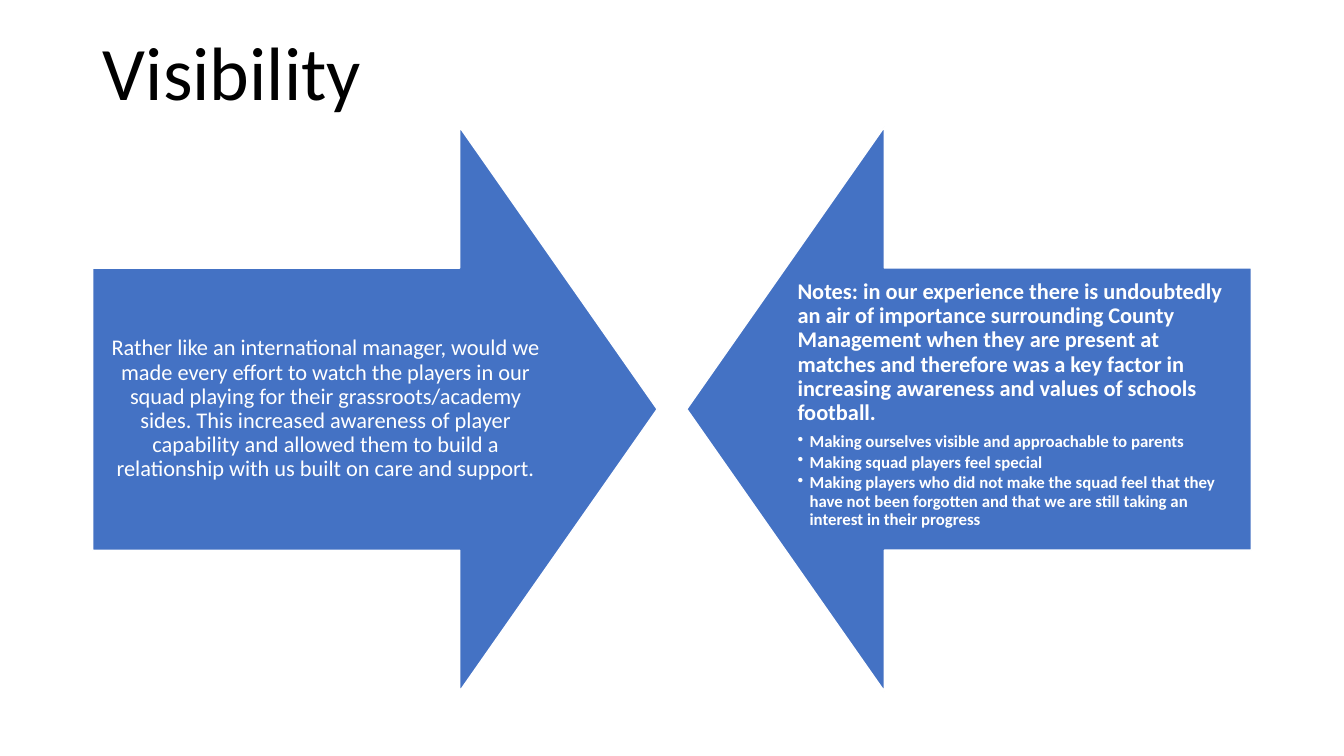
import dataclasses
import typing

import pptx
import pptx.dml.color
import pptx.enum.shapes
import pptx.enum.text
import pptx.oxml
import pptx.oxml.ns
import pptx.util

ALIGN = pptx.enum.text.PP_ALIGN
ANCHOR = pptx.enum.text.MSO_ANCHOR
WIDE, HIGH = 13.33, 7.5
EDGE, TOP = 6.9, 16.8
SPAN = 42.0
TALL = SPAN * WIDE / HIGH
BODY = 34.66
BLUE, WHITE, BLACK = "4472C4", "FFFFFF", "000000"


@dataclasses.dataclass(frozen=True)
class Line:
    text: str
    size: float = 16
    bold: bool = False
    align: typing.Any = ALIGN.LEFT
    after: float = 5.6
    dot: bool = False
    color: str = WHITE


@dataclasses.dataclass(frozen=True)
class Side:
    left: float
    start: float
    turn: float
    anchor: typing.Any
    lines: tuple[Line, ...]


POINTS = (
    "Making ourselves visible and approachable to parents",
    "Making squad players feel special",
    "Making players who did not make the squad feel that they have not been "
    "forgotten and that we are still taking an interest in their progress",
)
SIDES = (
    Side(EDGE, EDGE, 270, ANCHOR.MIDDLE, (
        Line("Rather like an international manager, would we made every effort "
             "to watch the players in our squad playing for their "
             "grassroots/academy sides. This increased awareness of player "
             "capability and allowed them to build a relationship with us "
             "built on care and support.", align=ALIGN.CENTER),
    )),
    Side(100 - EDGE - SPAN, 100 - EDGE - BODY, 90, ANCHOR.TOP, (
        Line("Notes: in our experience there is undoubtedly an air of "
             "importance surrounding County Management when they are present "
             "at matches and therefore was a key factor in increasing "
             "awareness and values of schools football.", bold=True),
        *(Line(point, 12, True, after=1.8, dot=True) for point in POINTS),
    )),
)


def tint(code: str) -> pptx.dml.color.RGBColor:
    return pptx.dml.color.RGBColor.from_string(code)


def place(left: float, top: float, width: float, height: float) -> list[int]:
    shares = ((left, WIDE), (top, HIGH), (width, WIDE), (height, HIGH))
    return [pptx.util.Inches(part * full / 100) for part, full in shares]


def apply(thing: typing.Any, form: dict[str, typing.Any]) -> None:
    for name, value in form.items():
        setattr(thing, name, value)


def mark(para: typing.Any) -> None:
    props = para._p.get_or_add_pPr()
    dent = pptx.util.Inches(0.12)
    for name, value in {"marL": dent, "indent": -dent, "lvl": 1}.items():
        props.set(name, str(value))
    dot = pptx.oxml.parse_xml(
        f'<a:buChar {pptx.oxml.ns.nsdecls("a")} char="•"/>')
    props.append(dot)


def write(frame: typing.Any, lines: tuple[Line, ...]) -> None:
    for index, line in enumerate(lines):
        para = frame.add_paragraph() if index else frame.paragraphs[0]
        apply(para, {"alignment": line.align, "line_spacing": 0.9,
                     "space_before": pptx.util.Pt(0),
                     "space_after": pptx.util.Pt(line.after)})
        if line.dot:
            mark(para)
        run = para.add_run()
        run.text = line.text
        apply(run.font, {"name": "Calibri", "size": pptx.util.Pt(line.size),
                         "bold": line.bold})
        run.font.color.rgb = tint(line.color)


def draw(shapes: typing.Any, side: Side) -> None:
    arrow = shapes.add_shape(pptx.enum.shapes.MSO_SHAPE.DOWN_ARROW,
                             *place(side.left, TOP, SPAN, TALL))
    arrow.rotation = side.turn
    arrow.adjustments[0] = 0.5
    arrow.adjustments[1] = 0.35
    arrow.shadow.inherit = False
    arrow.fill.solid()
    arrow.fill.fore_color.rgb = tint(BLUE)
    arrow.line.color.rgb = tint(WHITE)
    arrow.line.width = pptx.util.Pt(1)

    box = shapes.add_textbox(
        *place(side.start, TOP + TALL / 4, BODY, TALL / 2))
    pad = pptx.util.Inches(0.12)
    apply(box.text_frame, {"word_wrap": True, "vertical_anchor": side.anchor,
                           "margin_left": pad, "margin_right": pad,
                           "margin_top": pad, "margin_bottom": pad})
    write(box.text_frame, side.lines)


def main() -> None:
    deck = pptx.Presentation()
    apply(deck, {"slide_width": pptx.util.Inches(WIDE),
                 "slide_height": pptx.util.Inches(HIGH)})
    slide = deck.slides.add_slide(deck.slide_layouts.get_by_name("Title Only"))
    title = slide.shapes.title
    spot = place(EDGE, 4.27, 100 - 2 * EDGE, 11.87)
    apply(title, dict(zip(("left", "top", "width", "height"), spot)))
    apply(title.text_frame, {"vertical_anchor": ANCHOR.BOTTOM,
                             "word_wrap": True,
                             "auto_size": pptx.enum.text.MSO_AUTO_SIZE.NONE})
    write(title.text_frame, (Line("Visibility", 54, after=0, color=BLACK),))
    group = slide.shapes.add_group_shape()
    for side in SIDES:
        draw(group.shapes, side)
    deck.save("out.pptx")


if __name__ == "__main__":
    main()
